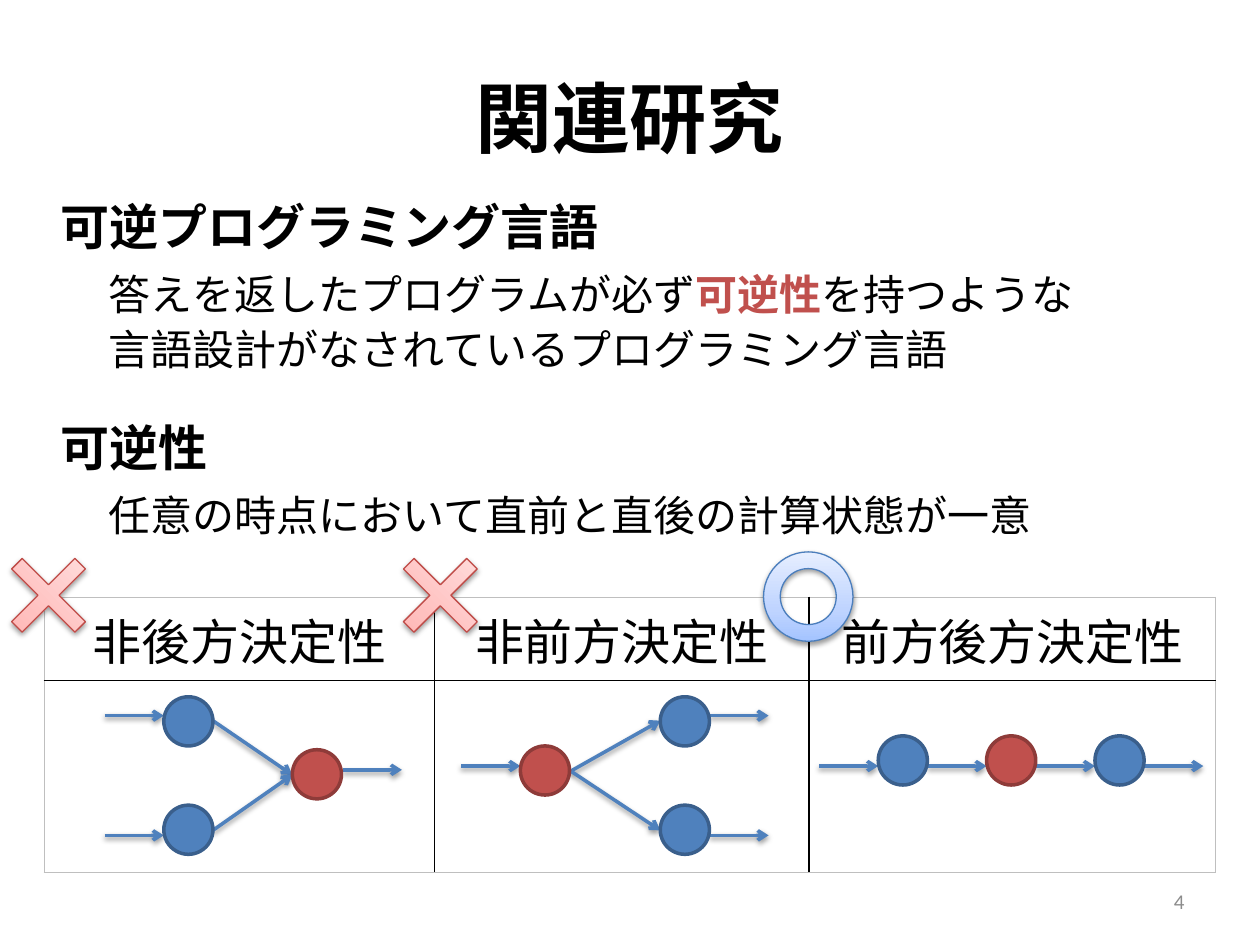
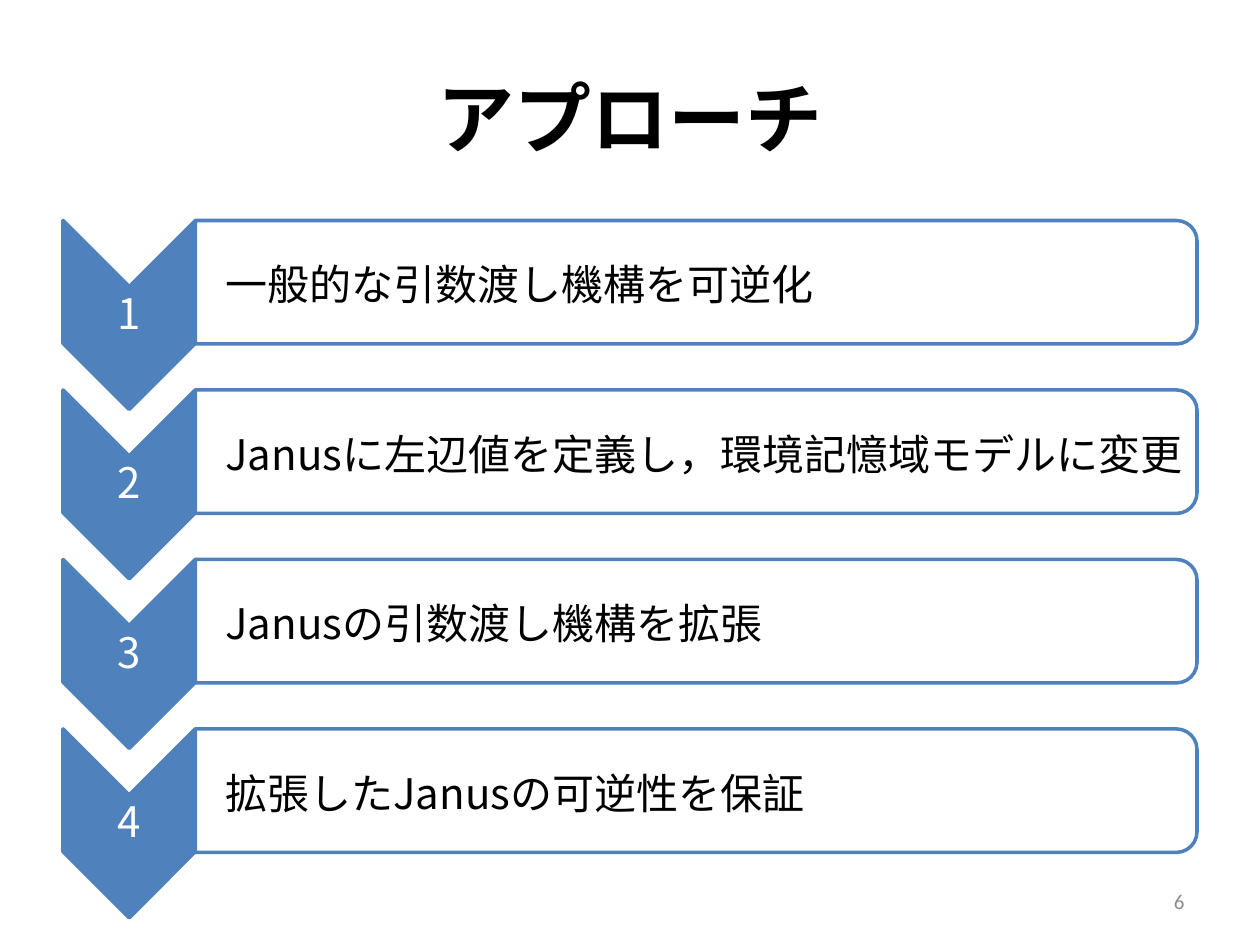
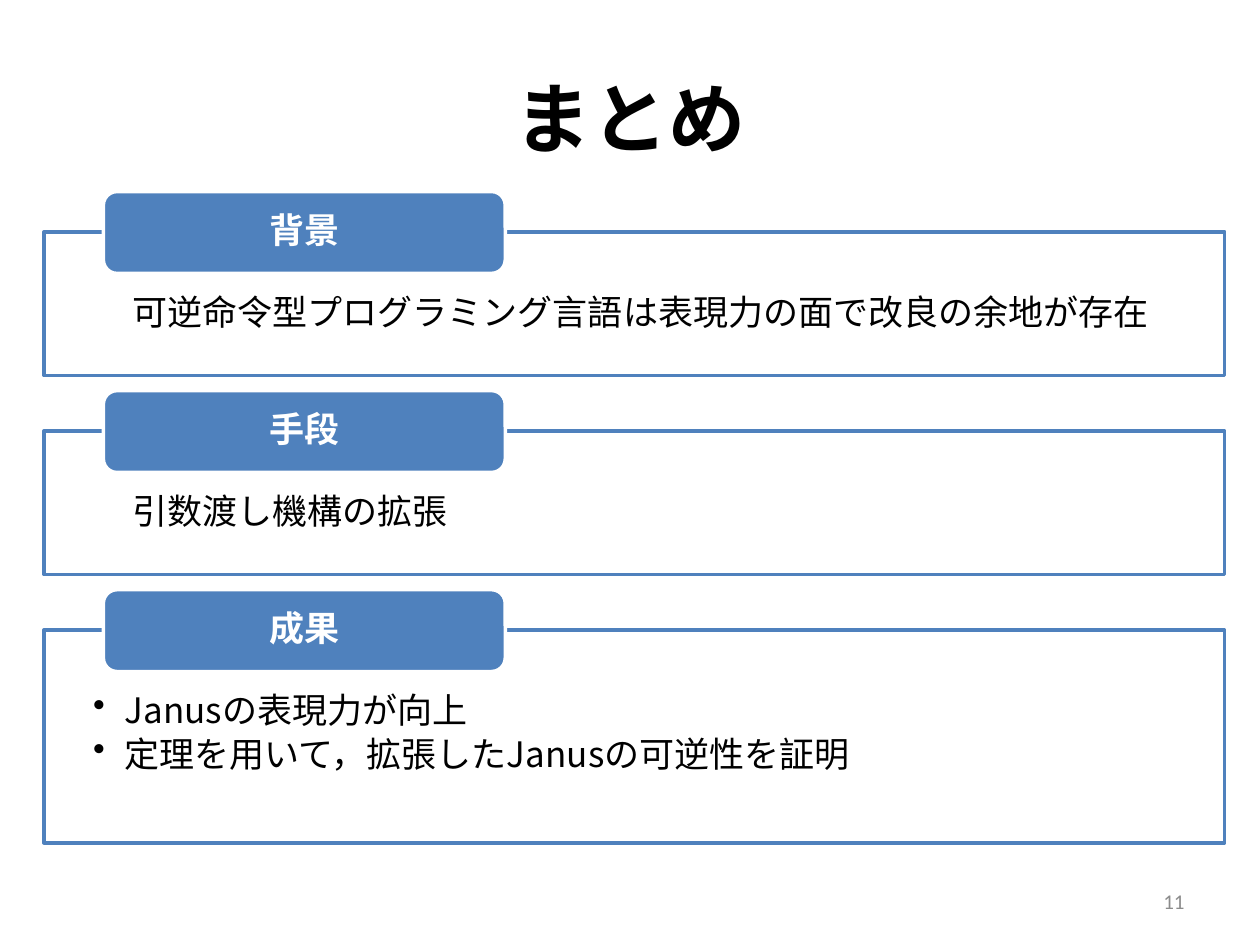
from dataclasses import dataclass
from lxml.etree import SubElement
from pptx import Presentation
from pptx.dml.color import RGBColor
from pptx.enum.shapes import MSO_CONNECTOR, MSO_SHAPE
from pptx.enum.text import MSO_ANCHOR, MSO_AUTO_SIZE, PP_ALIGN
from pptx.oxml import parse_xml
from pptx.oxml.ns import nsdecls, qn
from pptx.util import Inches, Pt


@dataclass(frozen=True)
class Theme:
    font: str = "Noto Sans CJK JP"
    plain: str = "Calibri"
    black: str = "000000"
    white: str = "FFFFFF"
    gray: str = "8C8C8C"
    edge: str = "BFBFBF"
    blue: str = "4F81BD"
    navy: str = "3A5F8C"
    red: str = "C0504D"
    wine: str = "8E3B39"
    title: int = 44
    head: int = 28
    body: int = 24
    card: int = 20
    foot: int = 12


T = Theme()
BLUE = (T.blue, T.navy)
RED = (T.red, T.wine)
ROSE = ("FFA6A5", "FFC0BF", "FFE7E7", "BF4C48")
SKY = ("A4C4FF", "BFD4FF", "E6EEFF", "4B7EBC")
NODE = 0.39
STEP = 0.47


def rgb(code):
    return RGBColor.from_string(code)


def style(run, size, color=T.black, bold=False, face=T.font):
    font = run.font
    font.size, font.bold, font.name = Pt(size), bold, face
    font.color.rgb = rgb(color)
    latin = run._r.rPr.find(qn("a:latin"))
    latin.addnext(parse_xml(f'<a:ea {nsdecls("a")} typeface="{face}"/>'))


def write(para, text, size, color=T.black, bold=False, face=T.font, align=PP_ALIGN.LEFT):
    para.text = text
    para.alignment = align
    for run in para.runs:
        style(run, size, color, bold, face)


def indent(para, left, first=0, bullet=False):
    props = para._p.get_or_add_pPr()
    props.set("marL", str(Inches(left)))
    props.set("indent", str(Inches(first)))
    if bullet:
        SubElement(props, qn("a:buChar")).set("char", "•")
    else:
        SubElement(props, qn("a:buNone"))


def setup(frame, inset=(0.1, 0.05, 0.1, 0.05), anchor=MSO_ANCHOR.MIDDLE):
    frame.word_wrap = True
    frame.auto_size = MSO_AUTO_SIZE.NONE
    frame.vertical_anchor = anchor
    frame.margin_left, frame.margin_top, frame.margin_right, frame.margin_bottom = map(Inches, inset)
    return frame


def label(slide, box, inset=(0.1, 0.05, 0.1, 0.05)):
    return setup(slide.shapes.add_textbox(*map(Inches, box)).text_frame, inset)


def form(slide, kind, box, fill, line, width=2.0):
    shape = slide.shapes.add_shape(kind, *map(Inches, box))
    shape.shadow.inherit = False
    if fill:
        shape.fill.solid()
        shape.fill.fore_color.rgb = rgb(fill)
    shape.line.color.rgb = rgb(line)
    shape.line.width = Pt(width)
    return shape


def turned(slide, kind, box, fill, line):
    x, y, w, h = box
    shape = form(slide, kind, (x + (w - h) / 2, y + (h - w) / 2, h, w), fill, line)
    shape.rotation = 90


def shade(shape):
    props = shape._element.spPr
    for old in props.findall(qn("a:effectLst")):
        props.remove(old)
    props.append(parse_xml(
        f'<a:effectLst {nsdecls("a")}><a:outerShdw blurRad="{Pt(3.1)}" dist="{Pt(1.6)}" '
        'dir="5400000" rotWithShape="0"><a:srgbClr val="000000"><a:alpha val="38000"/>'
        '</a:srgbClr></a:outerShdw></a:effectLst>'))


def arrow(slide, start, end):
    line = slide.shapes.add_connector(MSO_CONNECTOR.STRAIGHT, *map(Inches, start + end))
    line.line.color.rgb = rgb(T.blue)
    line.line.width = Pt(2)
    SubElement(line.line._get_or_add_ln(), qn("a:tailEnd")).set("type", "arrow")
    shade(line)


def mark(slide, kind, box, tones, adjust, turn=0):
    shape = form(slide, kind, box, None, tones[3], 0.75)
    shape.adjustments[0] = adjust
    shape.rotation = turn
    stops = "".join(f'<a:gs pos="{pos}"><a:srgbClr val="{tone}"/></a:gs>'
                    for pos, tone in zip((0, 35000, 100000), tones))
    shape._element.spPr.insert(2, parse_xml(
        f'<a:gradFill {nsdecls("a")} rotWithShape="1"><a:gsLst>{stops}</a:gsLst>'
        '<a:lin ang="16200000" scaled="0"/></a:gradFill>'))
    shade(shape)


def start(deck, layout, title, number):
    slide = deck.slides.add_slide(deck.slide_layouts[layout])
    head = slide.shapes.title
    head.left, head.top, head.width, head.height = map(Inches, (0.5, 0.3, 9, 1.25))
    write(setup(head.text_frame).paragraphs[0], title, T.title, bold=True, align=PP_ALIGN.CENTER)
    foot = label(slide, (7.17, 6.95, 2.33, 0.4))
    write(foot.paragraphs[0], str(number), T.foot, T.gray, face=T.plain, align=PP_ALIGN.RIGHT)
    return slide


def prose(slide, box, items):
    body = slide.placeholders[1]
    body.left, body.top, body.width, body.height = map(Inches, box)
    frame = setup(body.text_frame, anchor=MSO_ANCHOR.TOP)
    for i, (head, gap, parts) in enumerate(items):
        para = frame.paragraphs[0] if i == 0 else frame.add_paragraph()
        size = T.head if head else T.body
        para.line_spacing = Pt(round(size * 1.31, 1))
        para.space_before = Pt(gap)
        indent(para, 0 if head else 0.38)
        for part in parts:
            if part == "\n":
                para.add_line_break()
                continue
            run = para.add_run()
            run.text = part
            key = part == "可逆性" and not head
            style(run, size, T.red if key else T.black, head or key)


def border(cell, sides):
    props = cell._tc.get_or_add_tcPr()
    for i, (side, inner) in enumerate(sides):
        color, width = (T.black, 1) if inner else (T.edge, 0.75)
        props.insert(i, parse_xml(
            f'<a:{side} {nsdecls("a")} w="{Pt(width)}"><a:solidFill>'
            f'<a:srgbClr val="{color}"/></a:solidFill></a:{side}>'))


def grid(slide, box, widths, heights, heads):
    table = slide.shapes.add_table(len(heights), len(widths), *map(Inches, box)).table
    table.first_row = table.horz_banding = False
    for col, width in zip(table.columns, widths):
        col.width = Inches(width)
    for row, height in zip(table.rows, heights):
        row.height = Inches(height)
    for r in range(len(heights)):
        for c in range(len(widths)):
            cell = table.cell(r, c)
            cell.fill.background()
            border(cell, (("lnL", c > 0), ("lnR", c < len(widths) - 1),
                          ("lnT", r > 0), ("lnB", r < len(heights) - 1)))
            if r == 0:
                cell.vertical_anchor = MSO_ANCHOR.MIDDLE
                write(cell.text_frame.paragraphs[0], heads[c], T.head, align=PP_ALIGN.CENTER)


def flow(slide, left, top, nodes, steps, links=()):
    for x, y in steps:
        arrow(slide, (left + x, top + y), (left + x + STEP, top + y))
    for x, y, u, v in links:
        arrow(slide, (left + x, top + y), (left + u, top + v))
    for x, y, (fill, line) in nodes:
        form(slide, MSO_SHAPE.OVAL, (left + x, top + y, NODE, NODE), fill, line)


def related(deck):
    slide = start(deck, 1, "関連研究", 4)
    widths, heights = (3.1, 2.97, 3.23), (0.65, 1.52)
    left, top = 0.35, 4.74
    grid(slide, (left, top, sum(widths), sum(heights)), widths, heights,
         ("非後方決定性", "非前方決定性", "前方後方決定性"))
    prose(slide, (0.38, 1.47, 9.62, 3.39), (
        (True, 0, ("可逆プログラミング言語",)),
        (False, 4.8, ("答えを返したプログラムが必ず", "可逆性", "を持つような", "\n",
                      "言語設計がなされているプログラミング言語")),
        (True, 22, ("可逆性",)),
        (False, 4.8, ("任意の時点において直前と直後の計算状態が一意",))))
    base = top + heights[0]
    flow(slide, left, base,
         ((0.95, 0.14, BLUE), (0.95, 1, BLUE), (1.97, 0.56, RED)),
         ((0.48, 0.29), (0.48, 1.24), (2.37, 0.72)),
         ((1.34, 0.33, 1.97, 0.76), (1.34, 1.2, 1.97, 0.76)))
    flow(slide, left + widths[0], base,
         ((0.68, 0.53, RED), (1.79, 0.14, BLUE), (1.79, 1, BLUE)),
         ((0.21, 0.69), (2.18, 0.29), (2.18, 1.24)),
         ((1.08, 0.73, 1.79, 0.33), (1.08, 0.73, 1.79, 1.2)))
    pitch = NODE + STEP
    flow(slide, left + widths[0] + widths[1], base,
         [(0.55 + i * pitch, 0.45, tone) for i, tone in enumerate((BLUE, RED, BLUE))],
         [(0.08 + i * pitch, 0.69) for i in range(4)])
    for x in (0.03, 3.14):
        mark(slide, MSO_SHAPE.CROSS, (x, 4.37, 0.71, 0.71), ROSE, 0.417, 45)
    mark(slide, MSO_SHAPE.DONUT, (6.06, 4.38, 0.71, 0.71), SKY, 0.187)


def stage(slide, left, top, number, text):
    turned(slide, MSO_SHAPE.CHEVRON, (left, top, 1.05, 1.5), T.blue, T.blue)
    digit = label(slide, (left, top + 0.53, 1.05, 0.45), (0.02,) * 4).paragraphs[0]
    write(digit, str(number), T.body, T.white, align=PP_ALIGN.CENTER)
    digit.line_spacing = 0.9
    turned(slide, MSO_SHAPE.ROUND_2_SAME_RECTANGLE, (left + 1.05, top, 7.95, 0.98), T.white, T.blue)
    para = label(slide, (left + 1.05, top + 0.08, 7.9, 0.88), (0.09, 0.01, 0.01, 0.01)).paragraphs[0]
    write(para, text, T.body)
    para.line_spacing = Pt(T.body * 1.1)
    indent(para, 0.12, 0.03)


def approach(deck):
    slide = start(deck, 5, "アプローチ", 6)
    texts = ("一般的な引数渡し機構を可逆化", "Janusに左辺値を定義し，環境記憶域モデルに変更",
             "Janusの引数渡し機構を拡張", "拡張したJanusの可逆性を保証")
    for i, text in enumerate(texts):
        stage(slide, 0.5, 1.75 + i * 1.345, i + 1, text)


def card(slide, box, head, lines):
    left, top = box[:2]
    panel = form(slide, MSO_SHAPE.RECTANGLE, box, T.white, T.blue)
    frame = setup(panel.text_frame, (0.39, 0.49, 0.39, 0.16), MSO_ANCHOR.TOP)
    frame.text = "\n".join(lines)
    listed = len(lines) > 1
    for para, line in zip(frame.paragraphs, lines):
        write(para, line, T.card)
        para.line_spacing = Pt(T.card * 1.1)
        para.space_after = Pt(3)
        indent(para, 0.25 if listed else 0.31, -0.25 if listed else 0, listed)
    tab = form(slide, MSO_SHAPE.ROUNDED_RECTANGLE, (left + 0.47, top - 0.32, 3.19, 0.65), T.blue, T.white)
    para = setup(tab.text_frame, (0.25, 0, 0.25, 0)).paragraphs[0]
    write(para, head, T.card, T.white, True, align=PP_ALIGN.CENTER)
    para.line_spacing = 0.9


def summary(deck):
    slide = start(deck, 5, "まとめ", 11)
    cards = (("背景", 1.14, ("可逆命令型プログラミング言語は表現力の面で改良の余地が存在",)),
             ("手段", 1.14, ("引数渡し機構の拡張",)),
             ("成果", 1.69, ("Janusの表現力が向上", "定理を用いて，拡張したJanusの可逆性を証明")))
    for i, (head, height, lines) in enumerate(cards):
        card(slide, (0.35, 1.84 + i * 1.58, 9.37, height), head, lines)


def main():
    deck = Presentation()
    deck.slide_width, deck.slide_height = Inches(10), Inches(7.5)
    related(deck)
    approach(deck)
    summary(deck)
    deck.save("out.pptx")


if __name__ == "__main__":
    main()
